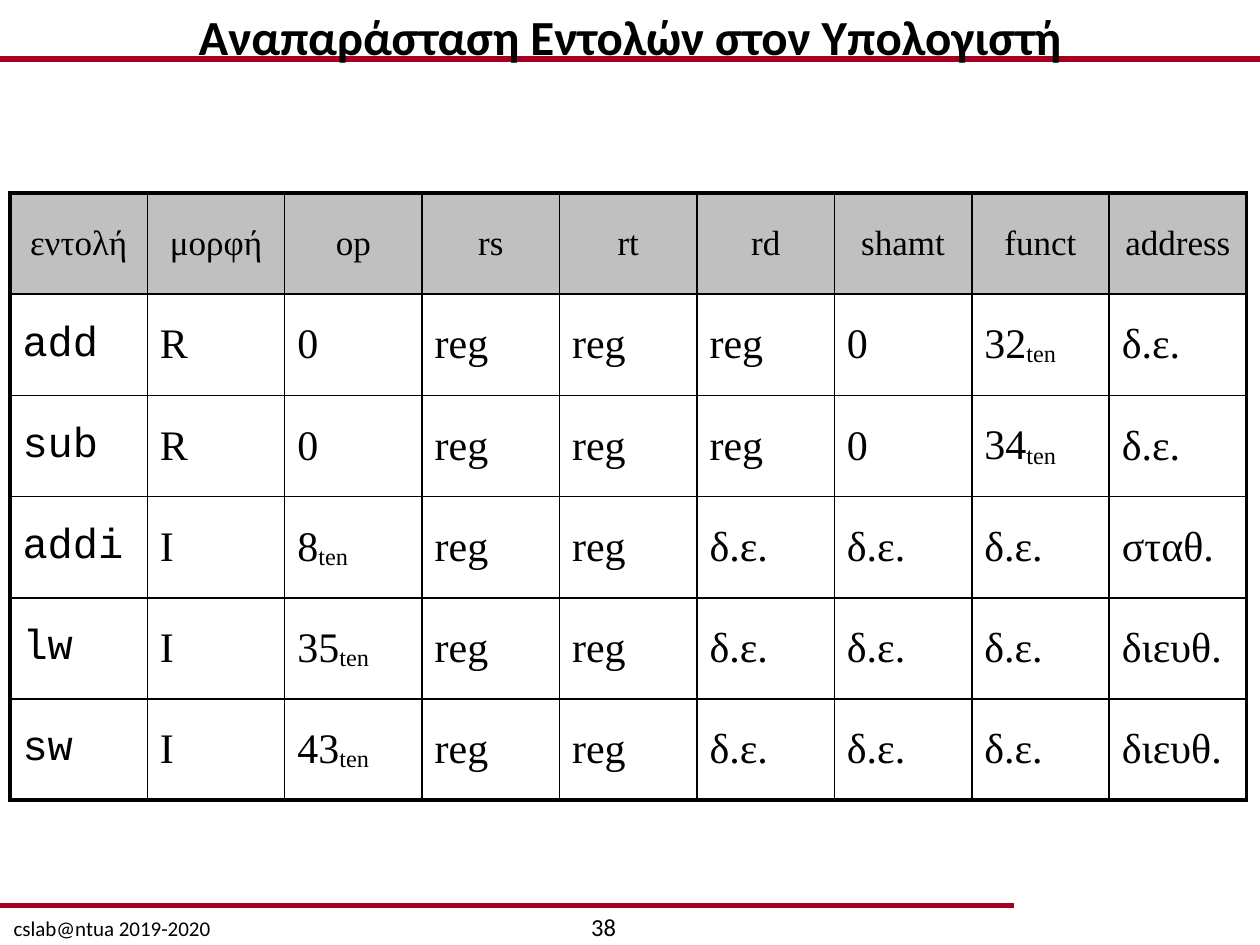
"""Build a slide with a table of instruction formats and their fields."""
import pptx
import pptx.dml.color
import pptx.enum.shapes
import pptx.enum.text
import pptx.oxml
import pptx.oxml.ns
import pptx.util
from pptx.util import Cm, Pt

TITLE = "Αναπαράσταση Εντολών στον Υπολογιστή"
FOOTER = "cslab@ntua 2019-2020"
PAGE = "38"
SUBSCRIPT = "ten"
HEADER = ["εντολή", "μορφή", "op", "rs", "rt", "rd", "shamt", "funct", "address"]
INSTRUCTIONS = [
    ["add", "R", "0", "reg", "reg", "reg", "0", ("32", SUBSCRIPT), "δ.ε."],
    ["sub", "R", "0", "reg", "reg", "reg", "0", ("34", SUBSCRIPT), "δ.ε."],
    ["addi", "I", ("8", SUBSCRIPT), "reg", "reg", "δ.ε.", "δ.ε.", "δ.ε.", "σταθ."],
    ["lw", "I", ("35", SUBSCRIPT), "reg", "reg", "δ.ε.", "δ.ε.", "δ.ε.", "διευθ."],
    ["sw", "I", ("43", SUBSCRIPT), "reg", "reg", "δ.ε.", "δ.ε.", "δ.ε.", "διευθ."],
]
RULES = [(18.26, 20.45), (1.19, 25.4)]
THEME = {
    "text": "000000", "rule": "A50021", "header": "C0C0C0",
    "sans": "Calibri", "serif": "Times New Roman", "mono": "Courier New",
    "title_size": 28, "header_size": 20, "cell_size": 24,
    "footer_size": 12, "page_size": 14,
    "rule_width": 3, "outer": 2.25, "inner": 1,
}
COL_WIDTH, ROW_HEIGHT = 2.77, 2.04
ALIGN = pptx.enum.text.PP_ALIGN


def rgb(name):
    """Return the theme colour of that name."""
    return pptx.dml.color.RGBColor.from_string(THEME[name])


def style(p, font, size, align, bold=False):
    """Format a paragraph."""
    p.alignment = align
    p.font.name, p.font.size, p.font.bold = THEME[font], Pt(THEME[size]), bold
    p.font.color.rgb = rgb("text")


def fill_box(sp, text, box, size, bold=False):
    """Place a text shape and write one centred line in it."""
    sp.left, sp.top, sp.width, sp.height = map(Cm, box)
    tf = sp.text_frame
    tf.word_wrap = True
    tf.auto_size = pptx.enum.text.MSO_AUTO_SIZE.NONE
    tf.vertical_anchor = pptx.enum.text.MSO_ANCHOR.TOP
    tf.text = text
    style(tf.paragraphs[0], "sans", size, ALIGN.CENTER, bold)


def add_rule(s, y, width):
    """Draw a horizontal rule from the left edge."""
    line = s.shapes.add_connector(
        pptx.enum.shapes.MSO_CONNECTOR.STRAIGHT, 0, Cm(y), Cm(width), Cm(y))
    line.line.color.rgb = rgb("rule")
    line.line.width = Pt(THEME["rule_width"])
    line._element.spPr.append(pptx.oxml.parse_xml(
        f'<a:effectLst {pptx.oxml.ns.nsdecls("a")}/>'))


def set_borders(cell, outer):
    """Draw the four borders, heavier on the sides at the table's edge."""
    tcPr = cell._tc.get_or_add_tcPr()
    for side, is_outer in zip("LRTB", outer):
        width = Pt(THEME["outer" if is_outer else "inner"])
        tcPr.append(pptx.oxml.parse_xml(
            f'<a:ln{side} {pptx.oxml.ns.nsdecls("a")} w="{width}"><a:solidFill>'
            f'<a:srgbClr val="{THEME["text"]}"/></a:solidFill></a:ln{side}>'))


def fill_cell(cell, content, is_header, is_name):
    """Write and format one cell, with an optional subscript."""
    text, *subscripts = (content,) if isinstance(content, str) else content
    p = cell.text_frame.paragraphs[0]
    p.add_run().text = text
    for subscript in subscripts:
        r = p.add_run()
        r.text = subscript
        r._r.get_or_add_rPr().set("baseline", "-10000")
    cell.vertical_anchor = pptx.enum.text.MSO_ANCHOR.MIDDLE
    if is_header:
        cell.fill.solid()
        cell.fill.fore_color.rgb = rgb("header")
        style(p, "serif", "header_size", ALIGN.CENTER)
    else:
        cell.fill.background()
        style(p, "mono" if is_name else "serif", "cell_size", ALIGN.LEFT)


def add_instruction_table(s):
    """Add the table of instructions."""
    rows = [HEADER] + INSTRUCTIONS
    n_rows, n_cols = len(rows), len(HEADER)
    table = s.shapes.add_table(
        n_rows, n_cols, Cm(0.2), Cm(3.89),
        Cm(n_cols * COL_WIDTH), Cm(n_rows * ROW_HEIGHT)).table
    table.first_row = table.horz_banding = False
    for i, row in enumerate(rows):
        for j, content in enumerate(row):
            cell = table.cell(i, j)
            set_borders(cell, (j == 0, j == n_cols - 1, i == 0, i == n_rows - 1))
            fill_cell(cell, content, i == 0, j == 0)


def main():
    """Build and save the slide."""
    prs = pptx.Presentation()
    prs.slide_width, prs.slide_height = Cm(25.4), Cm(19.05)
    s = prs.slides.add_slide(prs.slide_layouts[5])
    for y, width in RULES:
        add_rule(s, y, width)
    fill_box(s.shapes.add_textbox(0, 0, 0, 0), FOOTER,
             (-0.05, 18.34, 4.62, 0.51), "footer_size")
    add_instruction_table(s)
    fill_box(s.shapes.add_textbox(0, 0, 0, 0), PAGE,
             (9.53, 18.26, 5.28, 0.66), "page_size")
    title = s.shapes.title
    fill_box(title, TITLE, (0, 0, 25.4, 1.19), "title_size", bold=True)
    s.shapes._spTree.append(title._element)
    prs.save("out.pptx")


if __name__ == "__main__":
    main()
